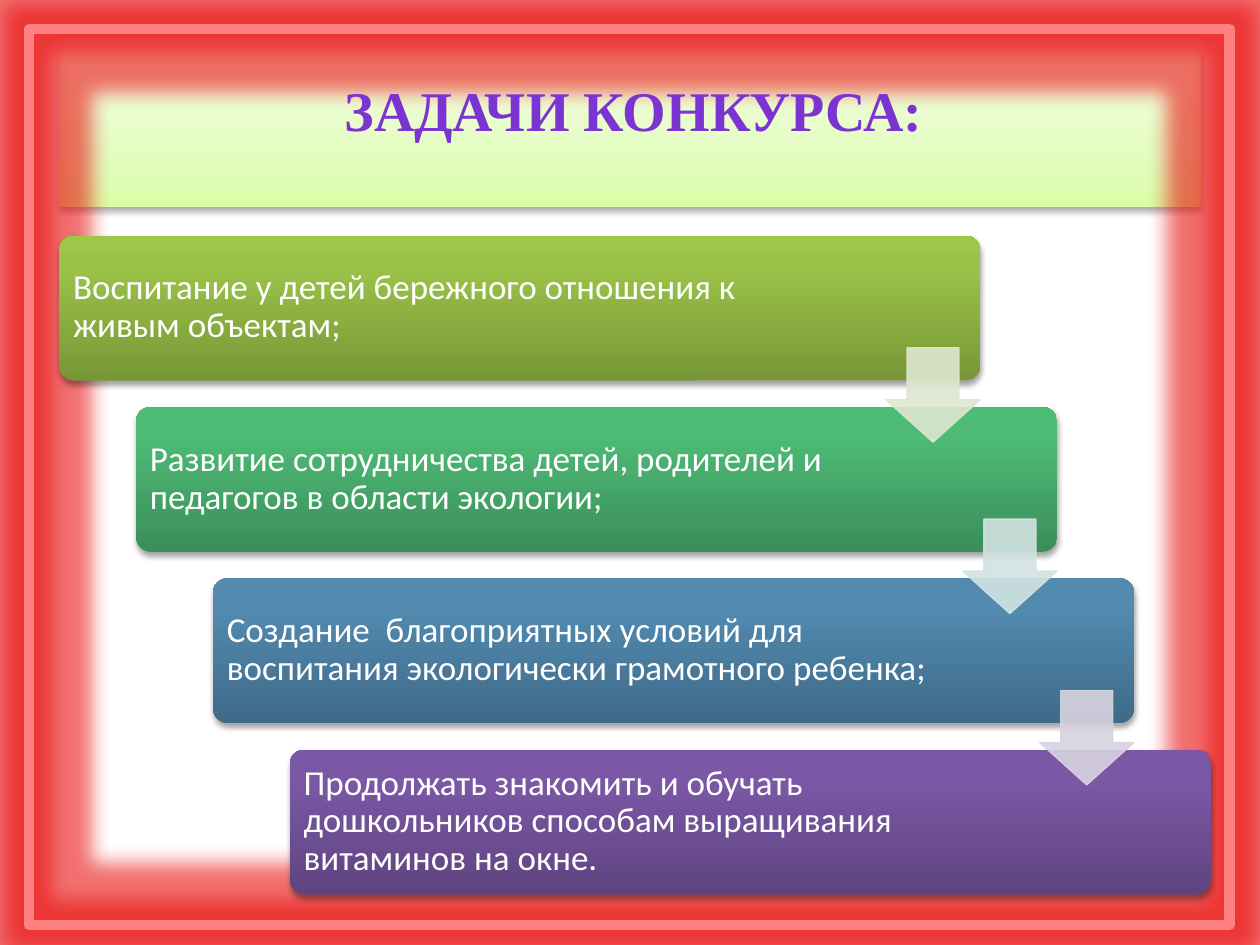
from lxml import etree
from pptx import Presentation
from pptx import util as u
from pptx.dml.color import RGBColor
from pptx.enum import shapes, text
from pptx.oxml import ns

COLORS = {
    "frame": "FF8181",
    "glow": "EA1010",
    "title": "7B34D2",
    "white": "FFFFFF",
    "shadow": "000000",
}
PANEL_STOPS = [(0, "DAFDA7"), (35, "E4FCC2"), (100, "F5FFE7")]
# Text, text width, gradient colours from bottom to top, colour of the arrow below
STEPS = [
    ("Воспитание у детей бережного отношения к живым объектам;",
     5.97, ("779737", "9BC348", "9DC746"), "DEE7D1"),
    ("Развитие сотрудничества детей, родителей и педагогов в области экологии;",
     5.88, ("3B8F5A", "4DBA75", "4BBD75"), "D2E3E2"),
    ("Создание  благоприятных условий для воспитания экологически грамотного ребенка;",
     5.88, ("3F6A88", "528AB0", "518BB3"), "D8D3E0"),
    ("Продолжать знакомить и обучать дошкольников способам выращивания витаминов на окне.",
     5.88, ("5F4480", "7B58A6", "7C57A8"), None),
]
STEP_LEFT, STEP_TOP = 0.47, 1.87
STEP_RIGHT, STEP_DOWN = 0.61, 1.36
STEP_WIDTH, STEP_HEIGHT = 7.31, 1.15
ARROW_SIZE = 0.75

deck = Presentation()
deck.slide_width, deck.slide_height = u.Inches(10), u.Inches(7.5)
page = deck.slides.add_slide(deck.slide_layouts[6])


def add_text(words, left, top, width, height, *, font, size, color, bold=False,
             align=text.PP_ALIGN.LEFT, anchor=text.MSO_ANCHOR.TOP,
             inset=(0.1, 0.05), spacing=1.0):
    box = page.shapes.add_textbox(*map(u.Inches, (left, top, width, height)))
    frame = box.text_frame
    frame.word_wrap = True
    frame.vertical_anchor = anchor
    frame.margin_left = frame.margin_right = u.Inches(inset[0])
    frame.margin_top = frame.margin_bottom = u.Inches(inset[1])
    para = frame.paragraphs[0]
    para.alignment = align
    para.line_spacing = spacing
    span = para.add_run()
    span.text = words
    span.font.name = font
    span.font.size = u.Pt(size)
    span.font.bold = bold
    span.font.color.rgb = RGBColor.from_string(color)


def add_gradient_box(kind, left, top, width, height, stops, blur, distance, opacity):
    box = page.shapes.add_shape(kind, *map(u.Inches, (left, top, width, height)))
    box.line.fill.background()
    box.fill.gradient()
    box.fill.gradient_angle = 90
    stop_list = box._element.spPr.find(".//" + ns.qn("a:gsLst"))
    for old in list(stop_list):
        stop_list.remove(old)
    for position, color in stops:
        stop = etree.SubElement(stop_list, ns.qn("a:gs"), pos=str(position * 1000))
        etree.SubElement(stop, ns.qn("a:srgbClr"), val=color)
    box.shadow.inherit = False
    shadow = etree.SubElement(
        box._element.spPr.find(ns.qn("a:effectLst")), ns.qn("a:outerShdw"),
        blurRad=str(u.Pt(blur)), dist=str(u.Pt(distance)), dir="5400000", rotWithShape="0")
    tint = etree.SubElement(shadow, ns.qn("a:srgbClr"), val=COLORS["shadow"])
    etree.SubElement(tint, ns.qn("a:alpha"), val=str(opacity * 1000))
    return box


# Title panel
add_gradient_box(shapes.MSO_SHAPE.RECTANGLE, 0.47, 0.39, 9.06, 1.25,
                 PANEL_STOPS, blur=3.5, distance=2.2, opacity=32)

# Glowing frame
border = page.shapes.add_shape(
    shapes.MSO_SHAPE.RECTANGLE, *map(u.Inches, (0.23, 0.23, 9.53, 7.11)))
border.fill.background()
border.line.color.rgb = RGBColor.from_string(COLORS["frame"])
border.line.width = u.Pt(6)
border.shadow.inherit = False
glow = etree.SubElement(border._element.spPr.find(ns.qn("a:effectLst")),
                        ns.qn("a:glow"), rad=str(u.Inches(0.3)))
glow_color = etree.SubElement(glow, ns.qn("a:srgbClr"), val=COLORS["glow"])
etree.SubElement(glow_color, ns.qn("a:alpha"), val="60000")

# Title
add_text("ЗАДАЧИ КОНКУРСА:", 0.78, 0.55, 8.5, 1.02, font="Times New Roman", size=32,
         color=COLORS["title"], bold=True, align=text.PP_ALIGN.CENTER)

# Staircase of tasks
for index, (words, text_width, colors, _) in enumerate(STEPS):
    left = STEP_LEFT + index * STEP_RIGHT
    top = STEP_TOP + index * STEP_DOWN
    step = add_gradient_box(shapes.MSO_SHAPE.ROUNDED_RECTANGLE, left, top,
                            STEP_WIDTH, STEP_HEIGHT, zip((0, 80, 100), colors),
                            blur=3.1, distance=1.8, opacity=35)
    step.adjustments[0] = 0.1
    add_text(words, left + 0.03, top + 0.03, text_width, 1.08, font="Calibri", size=20,
             color=COLORS["white"], anchor=text.MSO_ANCHOR.MIDDLE,
             inset=(0.08, 0.08), spacing=0.9)

# Arrows from each task to the next
for index, (_, _, _, color) in enumerate(STEPS[:-1]):
    left = STEP_LEFT + STEP_WIDTH - ARROW_SIZE + index * STEP_RIGHT
    top = 2.76 + index * STEP_DOWN
    arrow = page.shapes.add_shape(
        shapes.MSO_SHAPE.DOWN_ARROW,
        *map(u.Inches, (left, top, ARROW_SIZE, ARROW_SIZE)))
    arrow.adjustments[0], arrow.adjustments[1] = 0.55, 0.45
    arrow.shadow.inherit = False
    arrow.fill.solid()
    arrow.fill.fore_color.rgb = RGBColor.from_string(color)
    arrow.line.color.rgb = RGBColor.from_string(color)
    arrow.line.width = u.Pt(0.75)
    for tint in arrow._element.spPr.iter(ns.qn("a:srgbClr")):
        etree.SubElement(tint, ns.qn("a:alpha"), val="90000")

deck.save("out.pptx")
